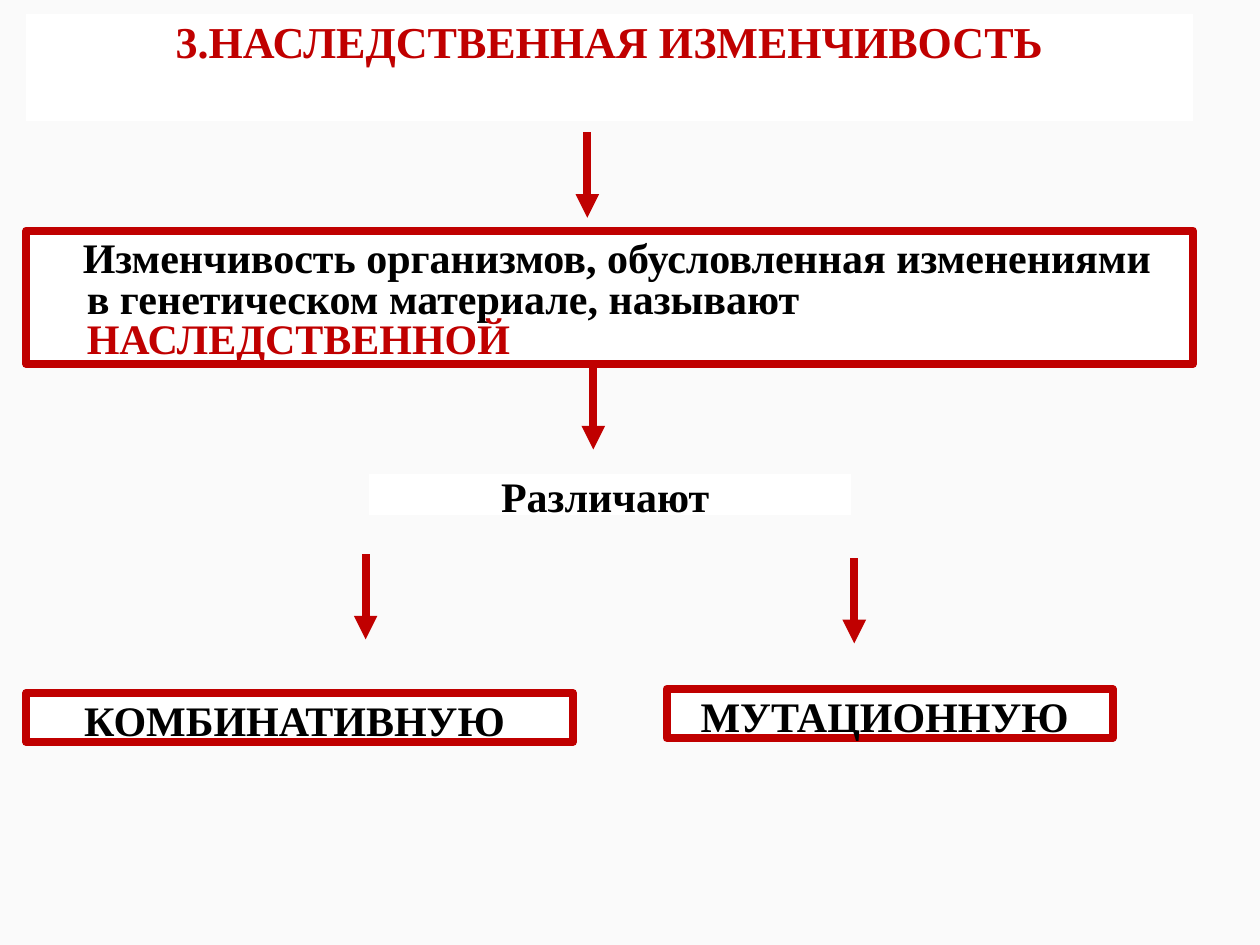
import pptx
import pptx.util
import pptx.dml.color
import pptx.enum.shapes
import pptx.enum.text
import pptx.oxml
from pptx.util import Cm, Pt

ALIGN = pptx.enum.text.PP_ALIGN

THEME = {
    "font": "Times New Roman",
    "title_size": 25.2,
    "text_size": 24,
    "line_width": 4.5,
    "background": "FAFAFA",
    "panel": "FFFFFF",
    "accent": "C00000",
    "text": "000000",
}

# Boxes: position (left, top, width, height) in cm, border, runs of (text, colour)
TITLE = {"at": (0.53, 0.28, 23.52, 2.16), "border": None,
         "runs": [("3.НАСЛЕДСТВЕННАЯ ИЗМЕНЧИВОСТЬ", "accent")]}
DEFINITION = {"at": (0.53, 4.65, 23.52, 2.69), "border": "accent",
              "runs": [("Изменчивость организмов, обусловленная изменениями "
                        "в генетическом материале, называют ", "text"),
                       ("НАСЛЕДСТВЕННОЙ", "accent")]}
LABELS = [
    {"at": (7.37, 9.47, 9.86, 0.99), "border": "background",
     "runs": [("Различают", "text")]},
    {"at": (0.53, 13.97, 11.02, 0.99), "border": "accent",
     "runs": [("КОМБИНАТИВНУЮ", "text")]},
    {"at": (13.44, 13.89, 8.99, 0.99), "border": "accent",
     "runs": [("МУТАЦИОННУЮ", "text")]},
]

# Downward arrows of equal length: (x, top) in cm
ARROWS = [(11.84, 2.67), (11.96, 7.34), (7.37, 11.17), (17.22, 11.25)]
ARROW_LENGTH = 1.72


def color(name):
    return pptx.dml.color.RGBColor.from_string(THEME[name])


def add_box(slide, box, size, spacing, align, insets):
    sp = slide.shapes.add_shape(pptx.enum.shapes.MSO_SHAPE.RECTANGLE,
                                *map(Cm, box["at"]))
    sp.shadow.inherit = False
    sp.fill.solid()
    sp.fill.fore_color.rgb = color("panel")
    if box["border"]:
        sp.line.color.rgb = color(box["border"])
        sp.line.width = Pt(THEME["line_width"])
    else:
        sp.line.fill.background()

    tf = sp.text_frame
    tf.word_wrap = True
    tf.vertical_anchor = pptx.enum.text.MSO_ANCHOR.TOP
    tf.margin_left, tf.margin_top, tf.margin_right, tf.margin_bottom = map(Cm, insets)
    p = tf.paragraphs[0]
    p.alignment = align
    p.line_spacing = spacing
    p.font.name = THEME["font"]
    p.font.size = Pt(size)
    p.font.bold = True
    for text, tone in box["runs"]:
        r = p.add_run()
        r.text = text
        r.font.color.rgb = color(tone)
    return p


def add_arrow(slide, x, top):
    cx = slide.shapes.add_connector(pptx.enum.shapes.MSO_CONNECTOR.STRAIGHT,
                                    Cm(x), Cm(top), Cm(x), Cm(top + ARROW_LENGTH))
    cx.line.color.rgb = color("accent")
    cx.line.width = Pt(THEME["line_width"])
    ln = cx.line._get_or_add_ln()
    ns = pptx.oxml.ns.qn
    ln.append(ln.makeelement(ns("a:tailEnd"), {"type": "triangle"}))
    sp_pr = ln.getparent()
    sp_pr.append(sp_pr.makeelement(ns("a:effectLst"), {}))


def main():
    prs = pptx.Presentation()
    prs.slide_width, prs.slide_height = Cm(25.4), Cm(19.05)
    s = prs.slides.add_slide(prs.slide_layouts[6])
    s.background.fill.solid()
    s.background.fill.fore_color.rgb = color("background")

    # Title
    add_box(s, TITLE, THEME["title_size"], 0.9, ALIGN.CENTER, (0.25, 0.13, 0.25, 0.13))

    # Definition with a slightly hanging first line
    p = add_box(s, DEFINITION, THEME["text_size"], 0.8, ALIGN.LEFT,
                (0.25, 0.22, 0.25, 0.13))
    p_pr = p._p.get_or_add_pPr()
    p_pr.set("marL", str(Cm(0.97)))
    p_pr.set("indent", str(Cm(-0.08)))

    # Kinds of variability
    for label in LABELS:
        add_box(s, label, THEME["text_size"], 0.8, ALIGN.CENTER,
                (0.25, 0.22, 0.45, 0))

    # Arrows
    for x, top in ARROWS:
        add_arrow(s, x, top)

    prs.save("out.pptx")


if __name__ == "__main__":
    main()
